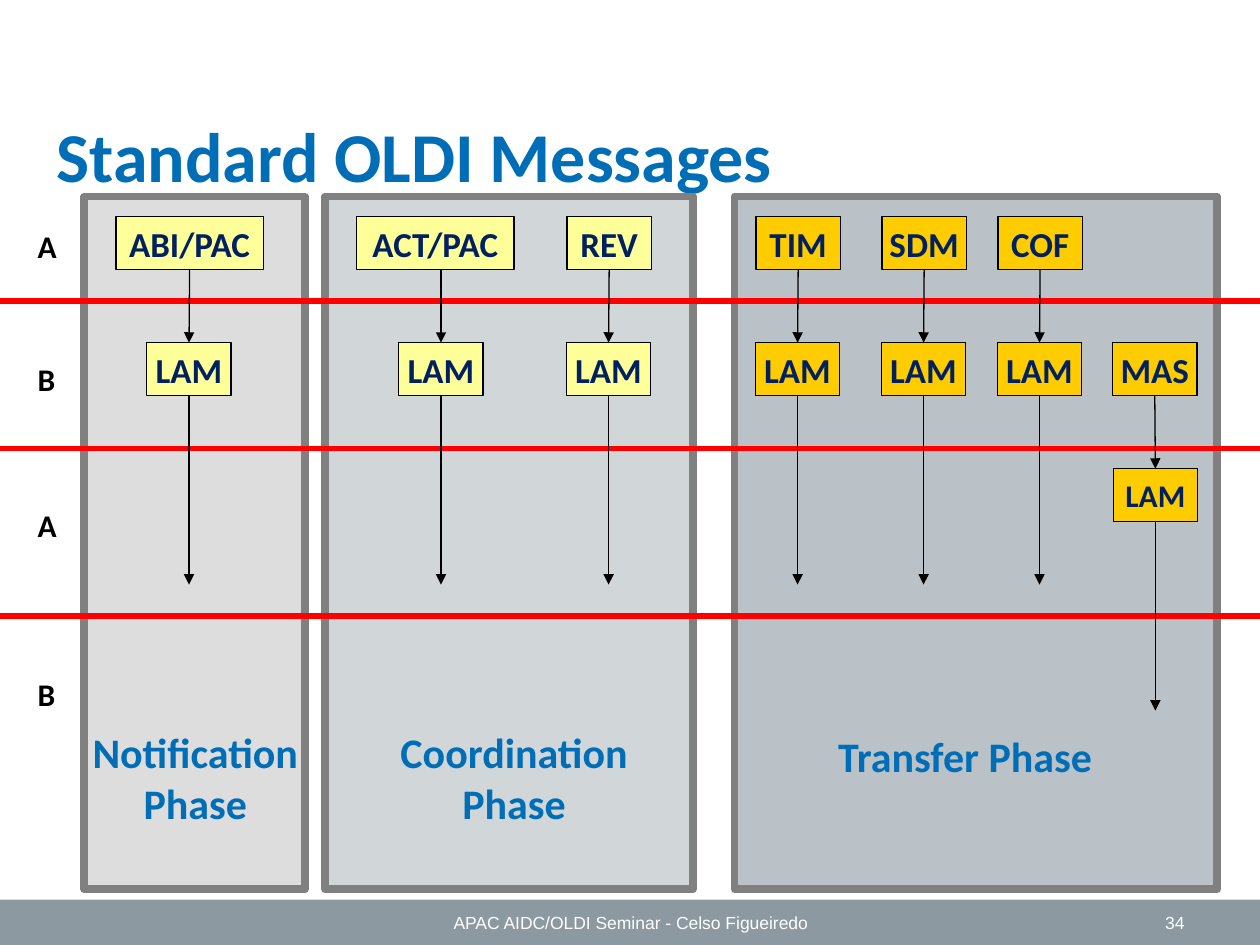
from lxml import etree
from pptx import Presentation
from pptx import util as u
from pptx.dml.color import RGBColor
from pptx.enum import shapes, text
from pptx.oxml.ns import qn

COLORS = {
    "white": "FFFFFF", "black": "000000", "footer": "8C99A1", "blue": "006EB7",
    "navy": "002060", "red": "FF0000", "border": "808080",
    "notification": "DDDDDD", "coordination": "D1D6D9", "transfer": "BAC2C7",
    "yellow": "FFFF99", "gold": "FFCC00",
}
BOX_WIDTH, BOX_HEIGHT = 0.67, 0.42
FIRST_ROW, ROW_STEP = 1.72, 1
REPLY_ARROW = 1.5
LEFT, CENTER, RIGHT = text.PP_ALIGN.LEFT, text.PP_ALIGN.CENTER, text.PP_ALIGN.RIGHT


def color(name):
    return RGBColor.from_string(COLORS[name])


class SlideBuilder:
    heading_font = "Calibri"
    footer_font = "Arial"

    def __init__(self, slide):
        self.slide = slide

    def add_lines(self, shape, lines, size, ink, align, font=heading_font, bold=True):
        frame = shape.text_frame
        for index, line in enumerate(lines):
            paragraph = frame.paragraphs[0] if index == 0 else frame.add_paragraph()
            paragraph.alignment = align
            run = paragraph.add_run()
            run.text = line
            run.font.name = font
            run.font.size = u.Pt(size)
            run.font.bold = bold
            run.font.color.rgb = color(ink)

    def rectangle(self, left, top, width, height, fill, line=None, weight=0.75):
        shape = self.slide.shapes.add_shape(
            shapes.MSO_SHAPE.RECTANGLE, u.Inches(left), u.Inches(top),
            u.Inches(width), u.Inches(height))
        shape.shadow.inherit = False
        shape.fill.solid()
        shape.fill.fore_color.rgb = color(fill)
        if line:
            shape.line.color.rgb = color(line)
            shape.line.width = u.Pt(weight)
        else:
            shape.line.fill.background()
        return shape

    def message(self, name, left, row, fill, width=BOX_WIDTH, size=20):
        top = FIRST_ROW + row * ROW_STEP
        shape = self.rectangle(left, top, width, BOX_HEIGHT, fill, "black")
        shape.text_frame.word_wrap = False
        shape.text_frame.vertical_anchor = text.MSO_ANCHOR.MIDDLE
        self.add_lines(shape, [name], size, "navy", CENTER)
        return shape

    def label(self, lines, left, top, width, height, size, ink, align=LEFT):
        box = self.slide.shapes.add_textbox(
            u.Inches(left), u.Inches(top), u.Inches(width), u.Inches(height))
        box.text_frame.word_wrap = False
        box.text_frame.auto_size = text.MSO_AUTO_SIZE.SHAPE_TO_FIT_TEXT
        self.add_lines(box, lines, size, ink, align)

    def footer(self, content, left, width, align):
        box = self.slide.shapes.add_textbox(
            u.Inches(left), u.Inches(7.14), u.Inches(width), u.Inches(0.36))
        box.text_frame.word_wrap = True
        box.text_frame.vertical_anchor = text.MSO_ANCHOR.MIDDLE
        self.add_lines(box, [content], 10, "white", align, self.footer_font, False)

    def line(self, x1, y1, x2, y2, ink, weight):
        connector = self.slide.shapes.add_connector(
            shapes.MSO_CONNECTOR.STRAIGHT, u.Inches(x1), u.Inches(y1),
            u.Inches(x2), u.Inches(y2))
        connector.line.color.rgb = color(ink)
        connector.line.width = u.Pt(weight)
        etree.SubElement(connector._element.spPr, qn("a:effectLst"))
        return connector

    def arrow(self, x, top, bottom, source=None, target=None):
        connector = self.line(x, top, x, bottom, "black", 0.75)
        tail = etree.SubElement(connector.line._get_or_add_ln(), qn("a:tailEnd"))
        tail.set("type", "triangle")
        if source is not None:
            connector.begin_connect(source, 2)
        if target is not None:
            connector.end_connect(target, 0)

    def exchange(self, name, left, center, row, fill, width, reply_size):
        request = self.message(name, left, row, fill, width)
        reply = self.message("LAM", center - BOX_WIDTH / 2, row + 1, fill, size=reply_size)
        request_bottom = FIRST_ROW + row * ROW_STEP + BOX_HEIGHT
        reply_bottom = request_bottom + ROW_STEP
        centered = abs(left + width / 2 - center) < 0.02
        self.arrow(center, request_bottom, reply_bottom - BOX_HEIGHT,
                   request if centered else None, reply)
        self.arrow(center, reply_bottom, reply_bottom + REPLY_ARROW, reply)


def main():
    presentation = Presentation()
    presentation.slide_width = u.Inches(10)
    presentation.slide_height = u.Inches(7.5)
    builder = SlideBuilder(presentation.slides.add_slide(presentation.slide_layouts[6]))

    builder.rectangle(0, 7.14, 10, 0.36, "footer")
    builder.footer("34", 7.17, 2.33, RIGHT)
    builder.label(["Standard OLDI Messages"], 0.35, 0.84, 5.94, 0.77, 40, "blue")
    builder.footer("APAC AIDC/OLDI Seminar - Celso Figueiredo", 3.42, 3.17, CENTER)

    for left, width, fill in [(0.67, 1.75, "notification"),
                              (2.58, 2.92, "coordination"),
                              (5.83, 3.83, "transfer")]:
        builder.rectangle(left, 1.56, width, 5.5, fill, "border", 4.5)

    for y in (2.39, 3.56, 4.89):
        builder.line(0, y, 10, y, "red", 3)
    for unit, top in [("A", 1.75), ("B", 2.81), ("A", 3.97), ("B", 5.31)]:
        builder.label([unit], 0.2, top, 0.38, 0.4, 18, "black")

    for name, left, center, row, fill, width, reply_size in [
        ("ABI/PAC", 0.92, 1.5, 0, "yellow", 1.17, 20),
        ("ACT/PAC", 2.83, 3.5, 0, "yellow", 1.25, 20),
        ("REV", 4.5, 4.83, 0, "yellow", BOX_WIDTH, 20),
        ("TIM", 6, 6.33, 0, "gold", BOX_WIDTH, 20),
        ("SDM", 7, 7.33, 0, "gold", BOX_WIDTH, 20),
        ("COF", 7.92, 8.25, 0, "gold", BOX_WIDTH, 20),
        ("MAS", 8.83, 9.17, 1, "gold", BOX_WIDTH, 18),
    ]:
        builder.exchange(name, left, center, row, fill, width, reply_size)

    for lines, left, top, width, height in [
        (["Transfer Phase"], 6.54, 5.75, 2.24, 0.5),
        (["Coordination", "Phase"], 3.07, 5.72, 2.02, 0.91),
        (["Notification", "Phase"], 0.62, 5.72, 1.86, 0.91),
    ]:
        builder.label(lines, left, top, width, height, 24, "blue", CENTER)

    presentation.save("out.pptx")


if __name__ == "__main__":
    main()
